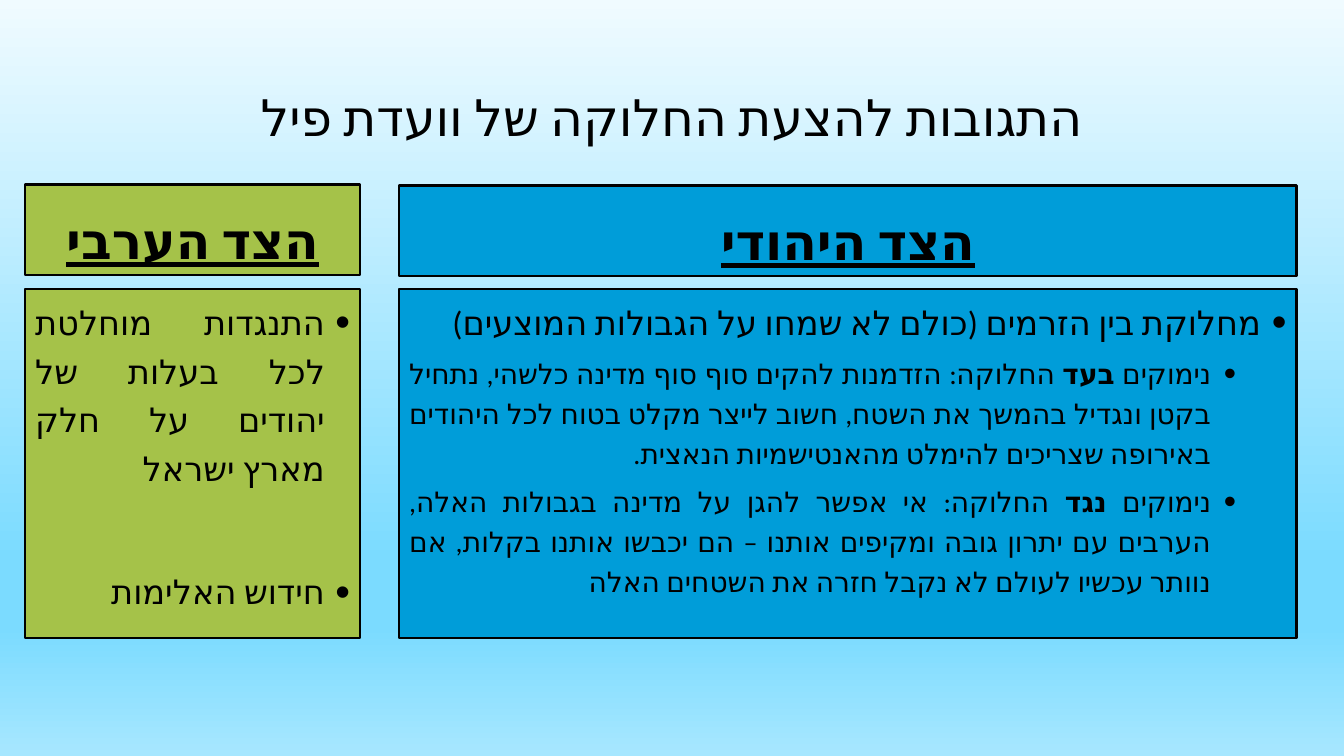
from copy import deepcopy
from dataclasses import dataclass

from lxml.etree import SubElement
from pptx import Presentation
from pptx.dml.color import RGBColor
from pptx.enum.lang import MSO_LANGUAGE_ID
from pptx.enum.shapes import MSO_SHAPE
from pptx.enum.text import MSO_ANCHOR, PP_ALIGN
from pptx.oxml.ns import qn
from pptx.slide import Slide
from pptx.text.text import TextFrame, _Paragraph, _Run
from pptx.util import Inches, Pt

COLORS = {"text": "000000", "arab": "A5C249", "jewish": "009DD9",
          "sky_top": "F0FBFF", "sky": "7BDBFF", "sky_base": "A7E7FF"}
SKY_STOPS = [(0, "sky_top"), (0.74, "sky"), (0.83, "sky"), (1, "sky_base")]
FONT = "Calibri"


@dataclass
class Bullet:
    """One bulleted paragraph; every second phrase is bold."""
    phrases: list[str]
    size: int = 24
    indent: float = 0.25
    before: int = 0
    align: PP_ALIGN = PP_ALIGN.JUSTIFY


@dataclass
class Side:
    """A headed column with the reactions of one side."""
    heading: str
    color: str
    left: float
    width: float
    top: float
    bullets: list[Bullet]


SIDES = [
    Side("הצד הערבי", "arab", 0.25, 3.32, 1.83, [
        Bullet(["התנגדות מוחלטת לכל בעלות של יהודים על חלק מארץ ישראל"]),
        Bullet(["חידוש האלימות"], before=54, align=PP_ALIGN.RIGHT),
    ]),
    Side("הצד היהודי", "jewish", 3.96, 8.9, 1.84, [
        Bullet(["מחלוקת בין הזרמים (כולם לא שמחו על הגבולות המוצעים)"],
               align=PP_ALIGN.RIGHT),
        Bullet(["נימוקים ", "בעד",
                " החלוקה: הזדמנות להקים סוף סוף מדינה כלשהי, נתחיל בקטן ונגדיל "
                "בהמשך את השטח, חשוב לייצר מקלט בטוח לכל היהודים באירופה "
                "שצריכים להימלט מהאנטישמיות הנאצית."], 20, 0.75, 5),
        Bullet(["נימוקים ", "נגד",
                " החלוקה: אי אפשר להגן על מדינה בגבולות האלה, הערבים עם יתרון "
                "גובה ומקיפים אותנו – הם יכבשו אותנו בקלות, אם נוותר עכשיו "
                "לעולם לא נקבל חזרה את השטחים האלה"], 20, 0.75, 5),
    ]),
]


def rgb(name: str) -> RGBColor:
    """Return the named colour."""
    return RGBColor.from_string(COLORS[name])


def format_run(r: _Run, size: int, bold: bool = False, underline: bool = False) -> None:
    """Give a Hebrew run its font."""
    r.font.name, r.font.size = FONT, Pt(size)
    r.font.bold, r.font.underline = bold, underline
    r.font.color.rgb = rgb("text")
    r.font.language_id = MSO_LANGUAGE_ID.HEBREW
    SubElement(r._r.get_or_add_rPr(), qn("a:cs"), typeface=FONT)


def format_paragraph(p: _Paragraph, align: PP_ALIGN, spacing: float) -> None:
    """Set a right-to-left paragraph."""
    p._p.get_or_add_pPr().set("rtl", "1")
    p.alignment, p.line_spacing = align, spacing


def set_heading(tf: TextFrame, text: str, anchor: MSO_ANCHOR, emphasis: bool) -> None:
    """Write one centred heading line."""
    tf.word_wrap, tf.vertical_anchor = True, anchor
    tf.text = text
    p = tf.paragraphs[0]
    format_paragraph(p, PP_ALIGN.CENTER, 0.9)
    format_run(p.runs[0], 36, emphasis, emphasis)


def add_bullet(p: _Paragraph, bullet: Bullet) -> None:
    """Write a bulleted paragraph."""
    pPr = p._p.get_or_add_pPr()
    pPr.set("marL", str(Inches(bullet.indent)))
    pPr.set("marR", "0")
    pPr.set("indent", str(Inches(-0.25)))
    SubElement(pPr, qn("a:buSzPct"), val="125000")
    SubElement(pPr, qn("a:buFont"), typeface="Arial")
    SubElement(pPr, qn("a:buChar"), char="•")
    format_paragraph(p, bullet.align, 1.2)
    p.space_before = Pt(bullet.before)
    for i, phrase in enumerate(bullet.phrases):
        r = p.add_run()
        r.text = phrase
        format_run(r, bullet.size, bold=i % 2 == 1)


def add_box(s: Slide, side: Side, top: float, height: float) -> TextFrame:
    """Draw an outlined box in the colour of a side."""
    sp = s.shapes.add_shape(MSO_SHAPE.RECTANGLE, Inches(side.left), Inches(top),
                            Inches(side.width), Inches(height))
    sp.shadow.inherit = False
    sp.fill.solid()
    sp.fill.fore_color.rgb = rgb(side.color)
    sp.line.color.rgb = rgb("text")
    sp.line.width = Pt(1.75)
    return sp.text_frame


def add_side(s: Slide, side: Side) -> None:
    """Draw the heading and the reactions of a side."""
    set_heading(add_box(s, side, side.top, 0.9), side.heading, MSO_ANCHOR.BOTTOM, True)
    tf = add_box(s, side, 2.87, 3.46)
    tf.word_wrap, tf.vertical_anchor = True, MSO_ANCHOR.TOP
    for i, bullet in enumerate(side.bullets):
        add_bullet(tf.add_paragraph() if i else tf.paragraphs[0], bullet)


def set_background(s: Slide) -> None:
    """Fill the background with the vertical sky gradient."""
    fill = s.background.fill
    fill.gradient()
    fill.gradient_angle = 270
    stops = s.element.find(".//" + qn("a:gsLst"))
    while len(stops) < len(SKY_STOPS):
        stops.append(deepcopy(stops[0]))
    for stop, (position, color) in zip(fill.gradient_stops, SKY_STOPS):
        stop.position = position
        stop.color.rgb = rgb(color)


def main() -> None:
    """Build and save the slide."""
    prs = Presentation()
    prs.slide_width, prs.slide_height = Inches(13.33), Inches(7.5)
    s = prs.slides.add_slide(prs.slide_layouts[5])
    set_background(s)
    title = s.shapes.title
    title.left, title.top = Inches(1.25), Inches(0.68)
    title.width, title.height = Inches(10.83), Inches(1.02)
    set_heading(title.text_frame, "התגובות להצעת החלוקה של וועדת פיל",
                MSO_ANCHOR.MIDDLE, False)
    for side in SIDES:
        add_side(s, side)
    prs.save("out.pptx")


if __name__ == "__main__":
    main()
